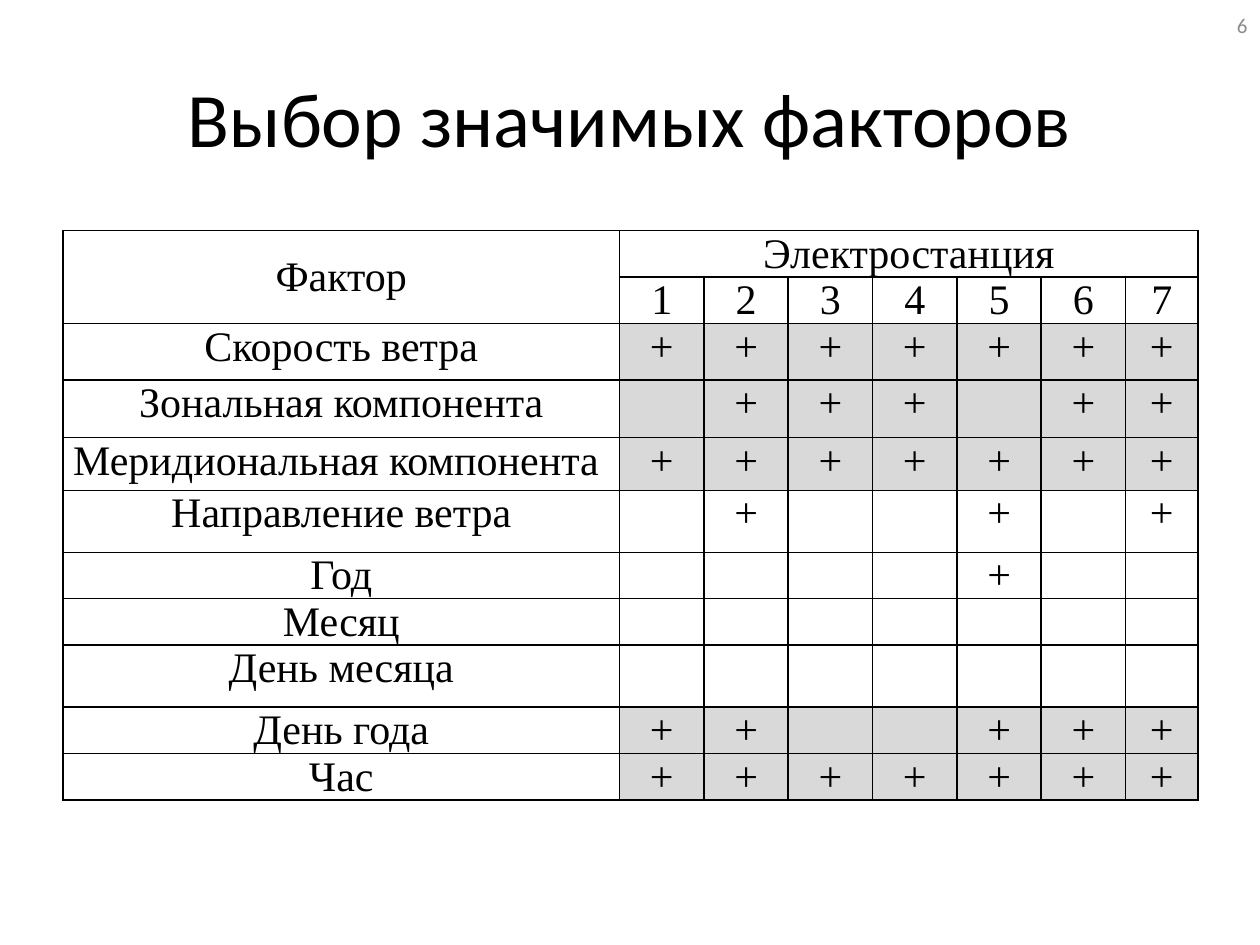
from lxml import etree
from pptx import Presentation
from pptx.dml.color import RGBColor
from pptx.enum.text import MSO_ANCHOR, PP_ALIGN
from pptx.oxml.ns import qn
from pptx.util import Cm, Pt

CENTER, RIGHT = PP_ALIGN.CENTER, PP_ALIGN.RIGHT
TOP, MIDDLE = MSO_ANCHOR.TOP, MSO_ANCHOR.MIDDLE
TITLE_ONLY = 5

COLORS = {"text": "000000", "number": "8C8C8C", "shaded": "D9D9D9",
          "plain": "FFFFFF", "border": "000000"}

FORMATS = {
    "title": {"name": "Calibri", "size": Pt(44), "bold": False},
    "table": {"name": "Times New Roman", "size": Pt(24), "bold": False},
    "number": {"name": "Calibri", "size": Pt(12), "bold": False},
}

STATIONS = 7
HEADER_ROWS = 2
HEADER_HEIGHT = 0.76
FACTORS = [
    ("Скорость ветра", "+++++++", True, 1.14),
    ("Зональная компонента", " +++ ++", True, 1.16),
    ("Меридиональная компонента ", "+++++++", True, 1.06),
    ("Направление ветра", " +  + +", False, 1.25),
    ("Год", "    +  ", False, 0.76),
    ("Месяц", "       ", False, 0.76),
    ("День месяца", "       ", False, 1.25),
    ("День года", "++  +++", True, 0.76),
    ("Час", "+++++++", True, 0.76),
]


class SlideBuilder:
    def __init__(self, presentation):
        layout = presentation.slide_layouts[TITLE_ONLY]
        self.slide = presentation.slides.add_slide(layout)

    def place(self, shape, left, top, width, height):
        box = {"left": left, "top": top, "width": width, "height": height}
        for name, value in box.items():
            setattr(shape, name, Cm(value))

    def add_text(self, text_frame, text, style, color="text", alignment=CENTER):
        paragraph = text_frame.paragraphs[0]
        paragraph.alignment = alignment
        run = paragraph.add_run()
        run.text = text
        for name, value in FORMATS[style].items():
            setattr(run.font, name, value)
        run.font.color.rgb = RGBColor.from_string(COLORS[color])

    def title(self, text, *box):
        shape = self.slide.shapes.title
        self.place(shape, *box)
        shape.text_frame.vertical_anchor = MIDDLE
        self.add_text(shape.text_frame, text, "title")

    def number(self, text, *box):
        shape = self.slide.shapes.add_textbox(*map(Cm, box))
        shape.text_frame.word_wrap = True
        shape.text_frame.vertical_anchor = MIDDLE
        self.add_text(shape.text_frame, text, "number", "number", RIGHT)

    def borders(self, cell):
        properties = cell._tc.get_or_add_tcPr()
        for side in ("lnL", "lnR", "lnT", "lnB"):
            line = etree.SubElement(properties, qn(f"a:{side}"), w=str(Pt(1)))
            fill = etree.SubElement(line, qn("a:solidFill"))
            etree.SubElement(fill, qn("a:srgbClr"), val=COLORS["border"])

    def cell(self, cell, text, fill="plain", anchor=TOP):
        self.borders(cell)
        cell.fill.solid()
        cell.fill.fore_color.rgb = RGBColor.from_string(COLORS[fill])
        layout = {"margin_left": Cm(0.18), "margin_right": Cm(0.18),
                  "margin_top": 0, "margin_bottom": 0, "vertical_anchor": anchor}
        for name, value in layout.items():
            setattr(cell, name, value)
        if text:
            self.add_text(cell.text_frame, text, "table")

    def table(self, rows, widths, heights, *box):
        frame = self.slide.shapes.add_table(len(rows), len(widths), *map(Cm, box))
        table = frame.table
        table.first_row = table.horz_banding = False
        for column, width in zip(table.columns, widths):
            column.width = Cm(width)
        for row, height in zip(table.rows, heights):
            row.height = Cm(height)
        self.place(frame, *box)
        for row_index, (texts, shaded) in enumerate(rows):
            anchor = MIDDLE if row_index < HEADER_ROWS else TOP
            for column_index, text in enumerate(texts):
                fill = "shaded" if shaded and column_index else "plain"
                self.cell(table.cell(row_index, column_index), text, fill, anchor)
        return table


def main():
    presentation = Presentation()
    presentation.slide_width, presentation.slide_height = Cm(25.4), Cm(19.05)
    builder = SlideBuilder(presentation)
    builder.title("Выбор значимых факторов", 1.27, 0.76, 22.86, 3.18)

    rows = [
        (["Фактор", "Электростанция"] + [""] * (STATIONS - 1), False),
        ([""] + [str(station + 1) for station in range(STATIONS)], False),
    ]
    rows += [([factor] + [mark.strip() for mark in marks], shaded)
             for factor, marks, shaded, _ in FACTORS]
    widths = [11.22] + [1.7] * (STATIONS - 1) + [1.46]
    heights = [HEADER_HEIGHT] * HEADER_ROWS + [factor[-1] for factor in FACTORS]
    table = builder.table(rows, widths, heights, 1.27, 4.65, 22.86, 11.96)
    table.cell(0, 0).merge(table.cell(1, 0))
    table.cell(0, 1).merge(table.cell(0, STATIONS))

    builder.number("6", 19.48, 0, 5.92, 1.02)
    presentation.save("out.pptx")


if __name__ == "__main__":
    main()
